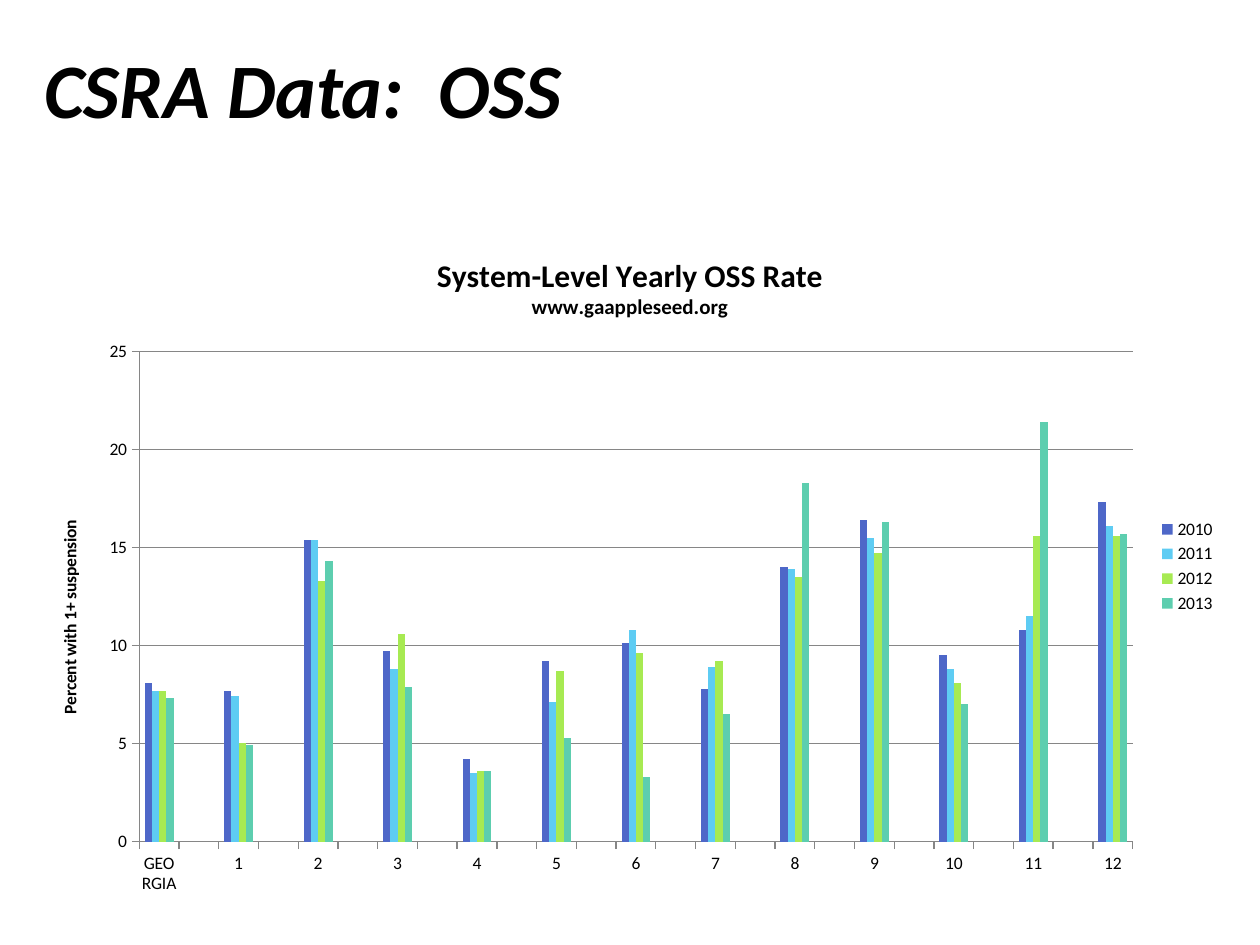
"""Build a slide with a clustered column chart of yearly OSS rates by school system."""
import pptx
import pptx.chart.data
import pptx.dml.color
import pptx.enum.chart
import pptx.enum.text
import pptx.oxml
import pptx.oxml.ns
import pptx.util
from pptx.util import Inches

TITLE = "CSRA Data:  OSS"
CHART_TITLE = [("System-Level Yearly OSS Rate", "chart_title"), ("www.gaappleseed.org", "subtitle")]
AXIS_TITLE = [("Percent with 1+ suspension", "label")]
SYSTEMS = ["GEORGIA"] + [str(number) for number in range(1, 13)]
RATES = {
    "2010": [8.1, 7.7, 15.4, 9.7, 4.2, 9.2, 10.1, 7.8, 14, 16.4, 9.5, 10.8, 17.3],
    "2011": [7.7, 7.4, 15.4, 8.8, 3.5, 7.1, 10.8, 8.9, 13.9, 15.5, 8.8, 11.5, 16.1],
    "2012": [7.7, 5, 13.3, 10.6, 3.6, 8.7, 9.6, 9.2, 13.5, 14.7, 8.1, 15.6, 15.6],
    "2013": [7.3, 4.9, 14.3, 7.9, 3.6, 5.3, 3.3, 6.5, 18.3, 16.3, 7, 21.4, 15.7],
}
PLOT_AREA = {"x": 0.09, "y": 0.18, "w": 0.83, "h": 0.73}
THEME = {
    "font": "Calibri",
    "text": "000000",
    "line": "868686",
    "series": ["4E67C8", "5ECCF3", "A7EA52", "5DCEAF"],
    "sizes": {"title": 44, "chart_title": 18, "subtitle": 12, "label": 10},
}


def color(value):
    """Return an RGB colour."""
    return pptx.dml.color.RGBColor.from_string(value)


def style_font(font, size, bold=False, italic=False):
    """Apply the theme to a font."""
    font.name = THEME["font"]
    font.size = pptx.util.Pt(THEME["sizes"][size])
    font.bold = bold
    font.italic = italic
    font.color.rgb = color(THEME["text"])


def write_lines(frame, lines):
    """Write bold paragraphs, one run each."""
    for index, (text, size) in enumerate(lines):
        para = frame.add_paragraph() if index else frame.paragraphs[0]
        span = para.add_run()
        span.text = text
        style_font(span.font, size, bold=True)


def spread(items, blank):
    """Put a blank between neighbouring items."""
    return [entry for item in items for entry in (item, blank)][:-1]


def place_plot(chart):
    """Fix the inner plot area as fractions of the chart."""
    plot_area = chart.plots[0]._element.getparent()
    for layout in plot_area.findall(pptx.oxml.ns.qn("c:layout")):
        plot_area.remove(layout)
    modes = "".join(f'<c:{key}Mode val="edge"/>' for key in "xy")
    places = "".join(f'<c:{key} val="{value}"/>' for key, value in PLOT_AREA.items())
    plot_area.insert(0, pptx.oxml.parse_xml(
        f'<c:layout {pptx.oxml.ns.nsdecls("c")}><c:manualLayout>'
        f'<c:layoutTarget val="inner"/>{modes}{places}</c:manualLayout></c:layout>'))


def add_title(slide):
    """Place and write the slide title."""
    title = slide.shapes.title
    title.left, title.top, title.width, title.height = map(Inches, (0.25, 0.07, 7.67, 1.25))
    title.text_frame.vertical_anchor = pptx.enum.text.MSO_ANCHOR.MIDDLE
    para = title.text_frame.paragraphs[0]
    para.alignment = pptx.enum.text.PP_ALIGN.LEFT
    span = para.add_run()
    span.text = TITLE
    style_font(span.font, "title", bold=True, italic=True)


def add_rates_chart(slide):
    """Add the column chart."""
    data = pptx.chart.data.CategoryChartData()
    data.categories = spread(SYSTEMS, "")
    for year, rates in RATES.items():
        data.add_series(year, spread(rates, None))
    chart = slide.shapes.add_chart(
        pptx.enum.chart.XL_CHART_TYPE.COLUMN_CLUSTERED,
        Inches(0.25), Inches(1.83), Inches(9.5), Inches(5.33), data).chart
    style_font(chart.font, "label")
    write_lines(chart.chart_title.text_frame, CHART_TITLE)
    chart.chart_title.include_in_layout = False

    chart.has_legend = True
    chart.legend.position = pptx.enum.chart.XL_LEGEND_POSITION.RIGHT
    chart.legend.include_in_layout = False

    plot = chart.plots[0]
    plot.gap_width = 150
    plot.overlap = 0
    plot.vary_by_categories = False
    for series, fill in zip(plot.series, THEME["series"]):
        series.format.fill.solid()
        series.format.fill.fore_color.rgb = color(fill)

    rate_axis = chart.value_axis
    rate_axis.minimum_scale, rate_axis.maximum_scale, rate_axis.major_unit = 0, 25, 5
    rate_axis.has_major_gridlines = True
    write_lines(rate_axis.axis_title.text_frame, AXIS_TITLE)
    for axis in (chart.category_axis, rate_axis):
        axis.major_tick_mark = pptx.enum.chart.XL_TICK_MARK.OUTSIDE
    for part in (chart.category_axis, rate_axis, rate_axis.major_gridlines):
        part.format.line.color.rgb = color(THEME["line"])
        part.format.line.width = pptx.util.Pt(0.75)
    place_plot(chart)


def main():
    """Build and save the deck."""
    deck = pptx.Presentation()
    deck.slide_width, deck.slide_height = Inches(10), Inches(7.5)
    slide = deck.slides.add_slide(deck.slide_layouts[5])
    add_title(slide)
    add_rates_chart(slide)
    deck.save("out.pptx")


if __name__ == "__main__":
    main()
